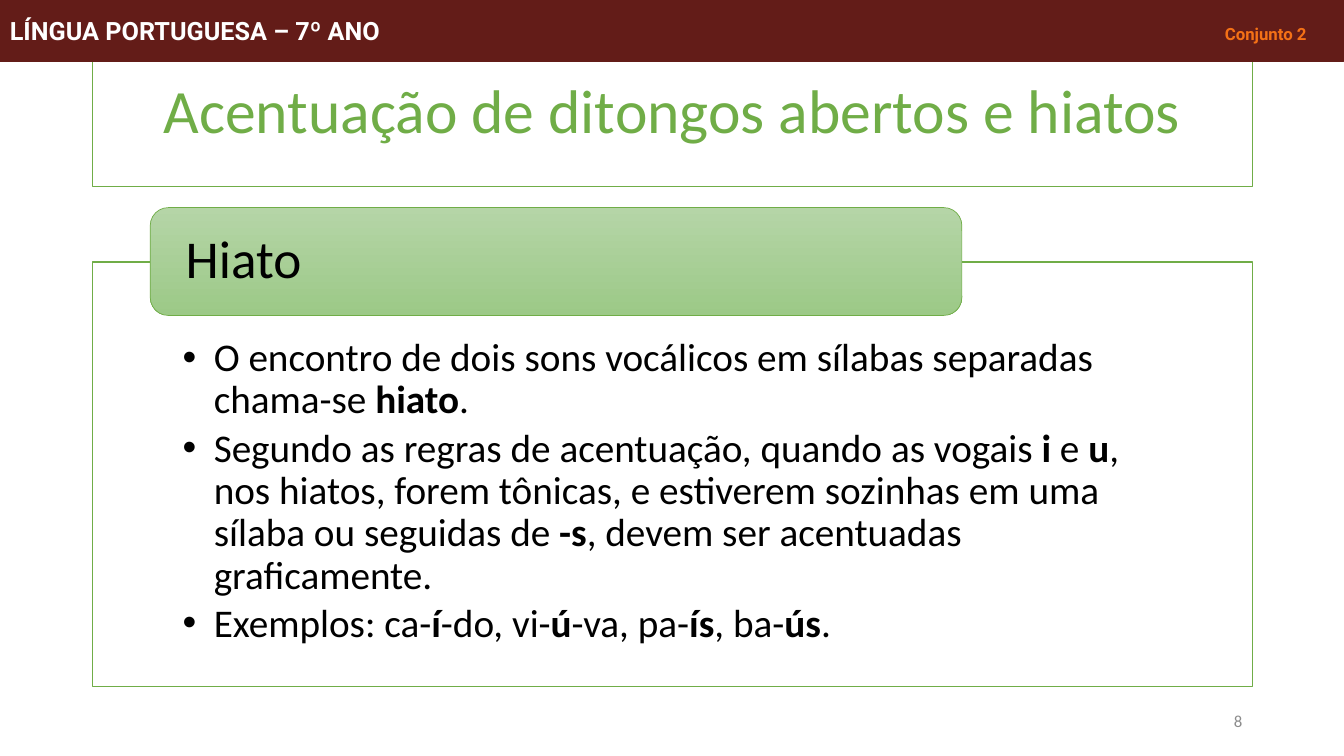
from dataclasses import dataclass

from lxml import etree
from pptx import Presentation
from pptx.dml.color import RGBColor
from pptx.enum.shapes import MSO_SHAPE
from pptx.enum.text import MSO_ANCHOR, MSO_AUTO_SIZE, PP_ALIGN
from pptx.oxml.ns import qn
from pptx.util import Inches, Pt

RECTANGLE, ROUNDED = MSO_SHAPE.RECTANGLE, MSO_SHAPE.ROUNDED_RECTANGLE
MIDDLE, TOP = MSO_ANCHOR.MIDDLE, MSO_ANCHOR.TOP
LEFT, CENTER, RIGHT = PP_ALIGN.LEFT, PP_ALIGN.CENTER, PP_ALIGN.RIGHT
NO_FIT = MSO_AUTO_SIZE.NONE


@dataclass(frozen=True)
class Theme:
    green: RGBColor = RGBColor.from_string("70AD47")
    pale_green: RGBColor = RGBColor.from_string("B5D5A7")
    mid_green: RGBColor = RGBColor.from_string("9CC987")
    maroon: RGBColor = RGBColor.from_string("631C18")
    orange: RGBColor = RGBColor.from_string("F47116")
    gray: RGBColor = RGBColor.from_string("8C8C8C")
    black: RGBColor = RGBColor.from_string("000000")
    white: RGBColor = RGBColor.from_string("FFFFFF")
    text_font: str = "Calibri"
    band_font: str = "Roboto"
    title_size: Pt = Pt(44)
    topic_size: Pt = Pt(38)
    body_size: Pt = Pt(28)
    band_size: Pt = Pt(18)
    small_size: Pt = Pt(12)


THEME = Theme()


def place(shape, left, top, width, height):
    shape.left, shape.top = Inches(left), Inches(top)
    shape.width, shape.height = Inches(width), Inches(height)


def style(paragraph, size, color, align=LEFT, name=THEME.text_font):
    paragraph.font.size = size
    paragraph.font.color.rgb = color
    paragraph.font.name = name
    paragraph.alignment = align


prs = Presentation()
prs.slide_width, prs.slide_height = Inches(13.33), Inches(7.5)
slide = prs.slides.add_slide(prs.slide_layouts[1])

title = slide.shapes.title
place(title, 0.92, 0.4, 11.5, 1.45)
title.text_frame.text = "Acentuação de ditongos abertos e hiatos"
title.text_frame.vertical_anchor = MIDDLE
title.text_frame.paragraphs[0].line_spacing = 0.9
style(title.text_frame.paragraphs[0], THEME.title_size, THEME.green, CENTER)

rules = slide.placeholders[1]
place(rules, 0.92, 2.6, 11.5, 4.21)
rules_text = rules.text_frame
rules_text.vertical_anchor = TOP
rules_text.margin_left = rules_text.margin_right = Inches(0.89)
rules_text.margin_top, rules_text.margin_bottom = Inches(0.75), Inches(0.22)

for framed in (title, rules):
    framed.text_frame.auto_size = NO_FIT
    framed.fill.solid()
    framed.fill.fore_color.rgb = THEME.white
    framed.line.color.rgb = THEME.green
    framed.line.width = Pt(1)

# Odd-numbered pieces are bold.
rule_pieces = [
    ["O encontro de dois sons vocálicos em sílabas separadas chama-se ", "hiato", "."],
    ["Segundo as regras de acentuação, quando as vogais ", "i", " e ", "u",
     ", nos hiatos, forem tônicas, e estiverem sozinhas em uma sílaba ou seguidas de ",
     "-s", ", devem ser acentuadas graficamente."],
    ["Exemplos: ca-", "í", "-do, vi-", "ú", "-va, pa-", "ís", ", ba-", "ús", "."],
]
for number, pieces in enumerate(rule_pieces):
    rule = rules_text.add_paragraph() if number else rules_text.paragraphs[0]
    for position, piece in enumerate(pieces):
        run = rule.add_run()
        run.text = piece
        if position % 2:
            run.font.bold = True
    style(rule, THEME.body_size, THEME.black)
    rule.line_spacing = 0.9
    rule.space_before, rule.space_after = Pt(0), Pt(4.2)
    rule_props = rule._p.get_or_add_pPr()
    rule_props.set("marL", str(Inches(0.31)))
    rule_props.set("indent", str(-Inches(0.31)))
    etree.SubElement(rule_props, qn("a:buChar")).set("char", "•")

topic = slide.shapes.add_shape(
    ROUNDED, Inches(1.49), Inches(2.06), Inches(8.05), Inches(1.07))
topic.shadow.inherit = False
topic.fill.gradient()
topic.fill.gradient_angle = 270
for stop, color in zip(topic.fill.gradient_stops, (THEME.pale_green, THEME.mid_green)):
    stop.color.rgb = color
topic.line.color.rgb = THEME.green
topic.line.width = Pt(0.5)
topic.text_frame.margin_left = Inches(0.3)
topic.text_frame.vertical_anchor = MIDDLE
topic.text_frame.text = "Hiato"
topic.text_frame.paragraphs[0].line_spacing = 0.9
style(topic.text_frame.paragraphs[0], THEME.topic_size, THEME.black)

page_number = slide.shapes.add_textbox(
    Inches(9.42), Inches(6.95), Inches(3), Inches(0.4))
page_number.text_frame.word_wrap = True
page_number.text_frame.vertical_anchor = MIDDLE
page_number.text_frame.text = "8"
style(page_number.text_frame.paragraphs[0], THEME.small_size, THEME.gray, RIGHT)

band = slide.shapes.add_shape(RECTANGLE, 0, 0, prs.slide_width, Inches(0.61))
band.shadow.inherit = False
band.fill.solid()
band.fill.fore_color.rgb = THEME.maroon
band.line.color.rgb = THEME.maroon
band.line.width = Pt(0.75)
band.text_frame.vertical_anchor = MIDDLE
band_line = band.text_frame.paragraphs[0]
style(band_line, THEME.band_size, THEME.white, name=THEME.band_font)
band_line.font.bold = True
subject = band_line.add_run()
subject.text = "LÍNGUA PORTUGUESA – 7º ANO\t"
group = band_line.add_run()
group.text = "Conjunto 2"
group.font.size = THEME.small_size
group.font.color.rgb = THEME.orange
tab_list = etree.Element(qn("a:tabLst"))
etree.SubElement(tab_list, qn("a:tab"), pos=str(Inches(12.05)), algn="l")
band_line._p.get_or_add_pPr().insert(0, tab_list)

prs.save("out.pptx")
